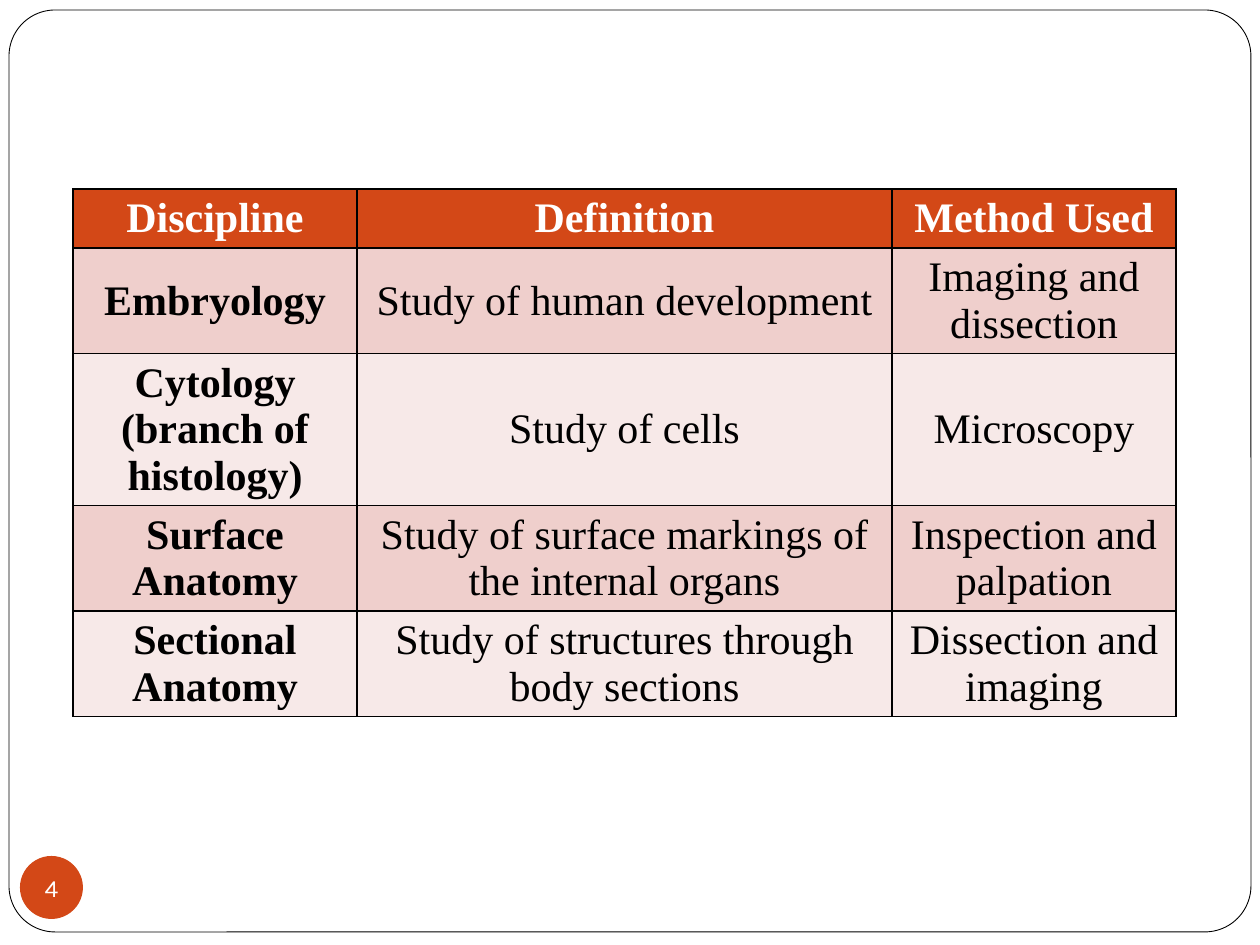
"""Build a slide with a table of anatomy disciplines inside a rounded frame."""
from dataclasses import dataclass

import lxml.etree
import pptx
import pptx.dml.color
import pptx.enum.shapes
import pptx.enum.text
import pptx.oxml.ns
import pptx.util

RGBColor = pptx.dml.color.RGBColor
MSO_SHAPE = pptx.enum.shapes.MSO_SHAPE
MIDDLE = pptx.enum.text.MSO_ANCHOR.MIDDLE
qn = pptx.oxml.ns.qn

PX_PER_INCH = 126
BLACK = RGBColor(0x00, 0x00, 0x00)
WHITE = RGBColor(0xFF, 0xFF, 0xFF)
ORANGE = RGBColor(0xD3, 0x48, 0x17)
PINK = RGBColor(0xEF, 0xCF, 0xCC)
PALE_PINK = RGBColor(0xF7, 0xE9, 0xE8)

COLUMN_WIDTHS = (284, 535, 284)


@dataclass(frozen=True)
class Row:
    height: int
    fill: RGBColor
    texts: tuple[str, str, str]
    header: bool = False


ROWS = (
    Row(52, ORANGE, ("Discipline", "Definition", "Method Used"), header=True),
    Row(52, PINK, ("Embryology", "Study of human development", "Imaging and dissection")),
    Row(128, PALE_PINK, ("Cytology\n(branch of histology)", "Study of cells", "Microscopy")),
    Row(52, PINK, ("Surface Anatomy", "Study of surface markings of the internal organs",
                   "Inspection and palpation")),
    Row(52, PALE_PINK, ("Sectional Anatomy", "Study of structures through body sections",
                        "Dissection and imaging")),
)


def px(n: int) -> int:
    return pptx.util.Emu(round(n * 914400 / PX_PER_INCH))


def write(tf, text: str, *, size: int, font: str, color: RGBColor, bold: bool = False) -> None:
    for i, line in enumerate(text.split("\n")):
        p = tf.add_paragraph() if i else tf.paragraphs[0]
        p.alignment = pptx.enum.text.PP_ALIGN.CENTER
        r = p.add_run()
        r.text = line
        r.font.size = pptx.util.Pt(size)
        r.font.name = font
        r.font.bold = bold
        r.font.color.rgb = color


def add_shape(slide, kind, left: int, top: int, width: int, height: int, fill: RGBColor):
    s = slide.shapes.add_shape(kind, px(left), px(top), px(width), px(height))
    s.shadow.inherit = False
    s.fill.solid()
    s.fill.fore_color.rgb = fill
    s.line.fill.background()
    return s


def add_borders(cell, color: RGBColor, points: float) -> None:
    tc_pr = cell._tc.get_or_add_tcPr()
    for side in ("lnL", "lnR", "lnT", "lnB"):
        ln = lxml.etree.SubElement(tc_pr, qn(f"a:{side}"), w=str(pptx.util.Pt(points)))
        fill = lxml.etree.SubElement(ln, qn("a:solidFill"))
        lxml.etree.SubElement(fill, qn("a:srgbClr"), val=str(color))


def add_discipline_table(slide, left: int, top: int, height: int) -> None:
    s = slide.shapes.add_table(len(ROWS), len(COLUMN_WIDTHS), px(left), px(top),
                               px(sum(COLUMN_WIDTHS)), px(height))
    table = s.table
    for column, width in zip(table.columns, COLUMN_WIDTHS):
        column.width = px(width)
    for i, row in enumerate(ROWS):
        table.rows[i].height = px(row.height)
        for j, text in enumerate(row.texts):
            cell = table.cell(i, j)
            cell.vertical_anchor = MIDDLE
            add_borders(cell, BLACK, 1)
            cell.fill.solid()
            cell.fill.fore_color.rgb = row.fill
            write(cell.text_frame, text, size=24, font="Times New Roman",
                  color=WHITE if row.header else BLACK, bold=row.header or j == 0)
    s.height = px(height)


def add_page_number(slide, number: str) -> None:
    s = add_shape(slide, MSO_SHAPE.OVAL, 20, 856, 63, 63, ORANGE)
    tf = s.text_frame
    tf.margin_left = tf.margin_right = tf.margin_top = tf.margin_bottom = 0
    tf.word_wrap = False
    tf.vertical_anchor = MIDDLE
    write(tf, number, size=14, font="Karla", color=WHITE)


def main() -> None:
    prs = pptx.Presentation()
    prs.slide_width, prs.slide_height = px(1260), px(945)
    slide = prs.slides.add_slide(prs.slide_layouts[6])
    frame = add_shape(slide, MSO_SHAPE.ROUNDED_RECTANGLE, 9, 10, 1242, 922, WHITE)
    frame.adjustments[0] = 0.05
    frame.line.color.rgb = BLACK
    frame.line.width = pptx.util.Pt(0.5)
    add_discipline_table(slide, 73, 189, 567)
    add_page_number(slide, "4")
    prs.save("out.pptx")


if __name__ == "__main__":
    main()
